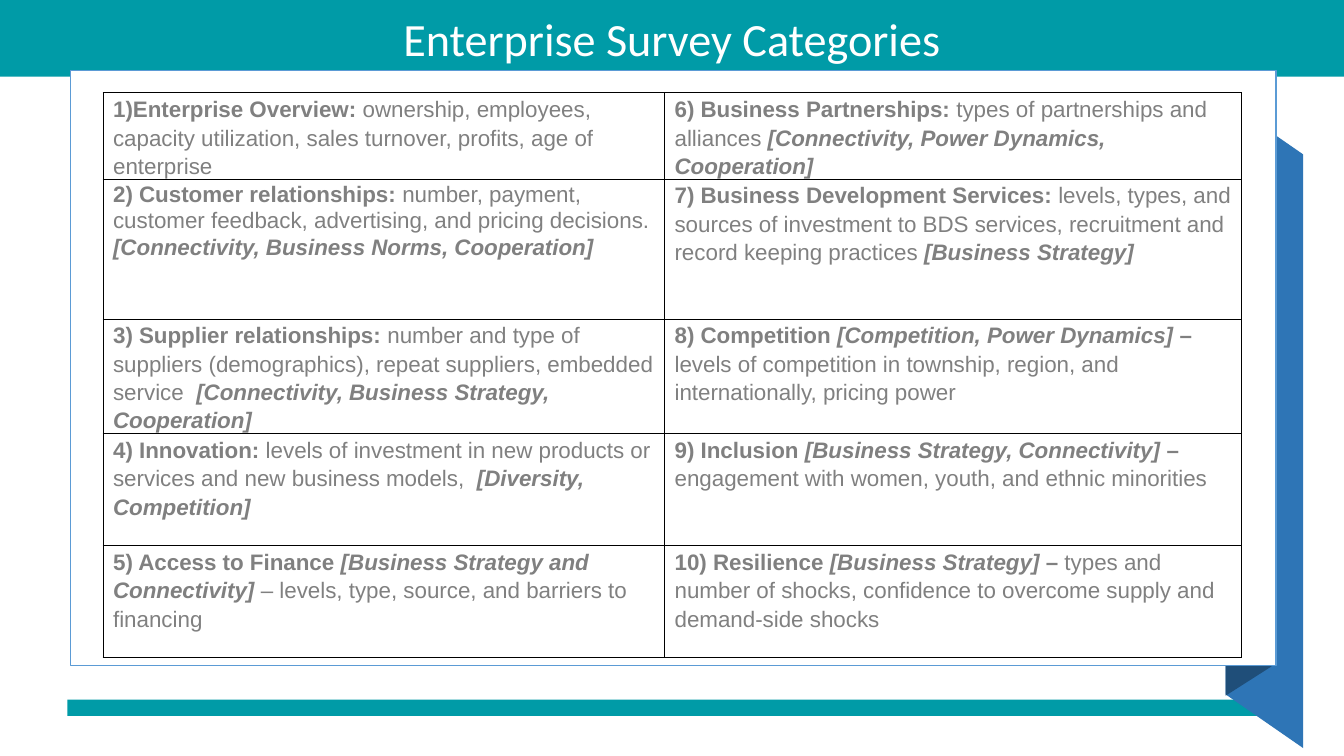
"""Build the Enterprise Survey Categories slide."""
from lxml.etree import SubElement
from pptx import Presentation
from pptx.dml.color import RGBColor
from pptx.enum.shapes import MSO_SHAPE
from pptx.enum.text import MSO_ANCHOR, PP_ALIGN
from pptx.oxml.ns import qn
from pptx.util import Cm, Pt

COLORS = {
    "teal": "009BA7",
    "ribbon": "2E75B6",
    "fold": "1F4E79",
    "panel": "FFFFFF",
    "panel_edge": "5B9BD5",
    "grid": "000000",
    "body": "808080",
    "title": "FFFFFF",
}

CATEGORIES = [
    [("1)Enterprise Overview:", "b"),
     (" ownership, employees, capacity utilization, sales turnover, profits, age of enterprise", "")],
    [("2) Customer relationships:", "b"),
     (" number, payment, customer feedback, advertising, and pricing decisions. ", ""),
     ("[Connectivity, Business Norms, Cooperation]", "bi")],
    [("3) Supplier relationships:", "b"),
     (" number and type of suppliers (demographics), repeat suppliers, embedded service  ", ""),
     ("[Connectivity, Business Strategy, Cooperation]", "bi")],
    [("4) Innovation:", "b"),
     (" levels of investment in new products or services and new business models,  ", ""),
     ("[Diversity, Competition]", "bi")],
    [("5) Access to Finance ", "b"),
     ("[Business Strategy and Connectivity]", "bi"),
     (" – levels, type, source, and barriers to financing", "")],
    [("6) Business Partnerships:", "b"),
     (" types of partnerships and alliances ", ""),
     ("[Connectivity, Power Dynamics, Cooperation]", "bi")],
    [("7) Business Development Services: ", "b"),
     ("levels, types, and sources of investment to BDS services, recruitment and record keeping practices ", ""),
     ("[Business Strategy]", "bi")],
    [("8) Competition ", "b"),
     ("[Competition, Power Dynamics]", "bi"),
     (" – ", "b"),
     ("levels of competition in township, region, and internationally, pricing power", "")],
    [("9) Inclusion ", "b"),
     ("[Business Strategy, Connectivity] ", "bi"),
     ("– ", "b"),
     ("engagement with women, youth, and ethnic minorities", "")],
    [("10) Resilience ", "b"),
     ("[Business Strategy]", "bi"),
     (" – ", "b"),
     ("types and number of shocks, confidence to overcome supply and demand-side shocks", "")],
]
COLUMN_WIDTHS = [14.15, 14.53]
ROW_HEIGHTS = [1.96, 3.53, 2.82, 2.82, 2.82]


def paint(shape, fill, edge=None):
    """Give a shape a flat fill and an optional thin outline."""
    shape.shadow.inherit = False
    shape.fill.solid()
    shape.fill.fore_color.rgb = RGBColor.from_string(COLORS[fill])
    if edge:
        shape.line.color.rgb = RGBColor.from_string(COLORS[edge])
        shape.line.width = Pt(1)
    else:
        shape.line.fill.background()


def add_rectangle(left, top, width, height, fill, edge=None):
    """Add a painted rectangle measured in centimetres."""
    rectangle = slide.shapes.add_shape(
        MSO_SHAPE.RECTANGLE, Cm(left), Cm(top), Cm(width), Cm(height))
    paint(rectangle, fill, edge)


presentation = Presentation()
presentation.slide_width = Cm(33.87)
presentation.slide_height = Cm(19.05)
slide = presentation.slides.add_slide(presentation.slide_layouts[6])

add_rectangle(0, 0, 33.87, 1.93, "teal")
add_rectangle(1.7, 17.63, 30.58, 0.41, "teal")

for color, corners in [
    ("ribbon", [(32.84, 18.85), (30.89, 17.5), (30.89, 2.54), (32.84, 3.89)]),
    ("fold", [(32.05, 16.79), (30.89, 17.53), (30.89, 2.54), (32.05, 1.78)]),
]:
    points = [(Cm(x), Cm(y)) for x, y in corners]
    outline = slide.shapes.build_freeform(*points[0])
    outline.add_line_segments(points[1:], close=True)
    paint(outline.convert_to_shape(), color)

add_rectangle(1.78, 1.78, 30.38, 14.99, "panel", "panel_edge")

survey = slide.shapes.add_table(
    len(ROW_HEIGHTS), len(COLUMN_WIDTHS), Cm(2.6), Cm(2.34),
    Cm(sum(COLUMN_WIDTHS)), Cm(sum(ROW_HEIGHTS))).table
survey.first_row = False
survey.horz_banding = False
for column, width in zip(survey.columns, COLUMN_WIDTHS):
    column.width = Cm(width)
for row, height in zip(survey.rows, ROW_HEIGHTS):
    row.height = Cm(height)

for index, category in enumerate(CATEGORIES):
    column_index, row_index = divmod(index, len(ROW_HEIGHTS))
    cell = survey.cell(row_index, column_index)
    cell.margin_left = cell.margin_right = Cm(0.25)
    cell.margin_top = Cm(0.03)
    cell.margin_bottom = Cm(0)
    properties = cell._tc.get_or_add_tcPr()
    for side in ("a:lnL", "a:lnR", "a:lnT", "a:lnB"):
        border = SubElement(properties, qn(side), w=str(Pt(1)))
        border_fill = SubElement(border, qn("a:solidFill"))
        SubElement(border_fill, qn("a:srgbClr"), val=COLORS["grid"])
    cell.fill.background()

    paragraph = cell.text_frame.paragraphs[0]
    is_customer_row = category[0][0].startswith("2)")
    paragraph.line_spacing = 1.07 if is_customer_row else 1.14
    paragraph.space_after = Pt(0 if is_customer_row else 8)
    for words, style in category:
        run = paragraph.add_run()
        run.text = words
        run.font.name = "Arial"
        run.font.size = Pt(16)
        run.font.bold = "b" in style
        run.font.italic = "i" in style
        run.font.color.rgb = RGBColor.from_string(COLORS["body"])

heading = slide.shapes.add_textbox(Cm(0), Cm(0.23), Cm(33.87), Cm(1.65)).text_frame
heading.word_wrap = True
heading.vertical_anchor = MSO_ANCHOR.MIDDLE
heading.text = "Enterprise Survey Categories"
heading_line = heading.paragraphs[0]
heading_line.alignment = PP_ALIGN.CENTER
heading_line.line_spacing = 0.9
heading_font = heading_line.runs[0].font
heading_font.name = "Calibri"
heading_font.size = Pt(33)
heading_font.color.rgb = RGBColor.from_string(COLORS["title"])

presentation.save("out.pptx")
